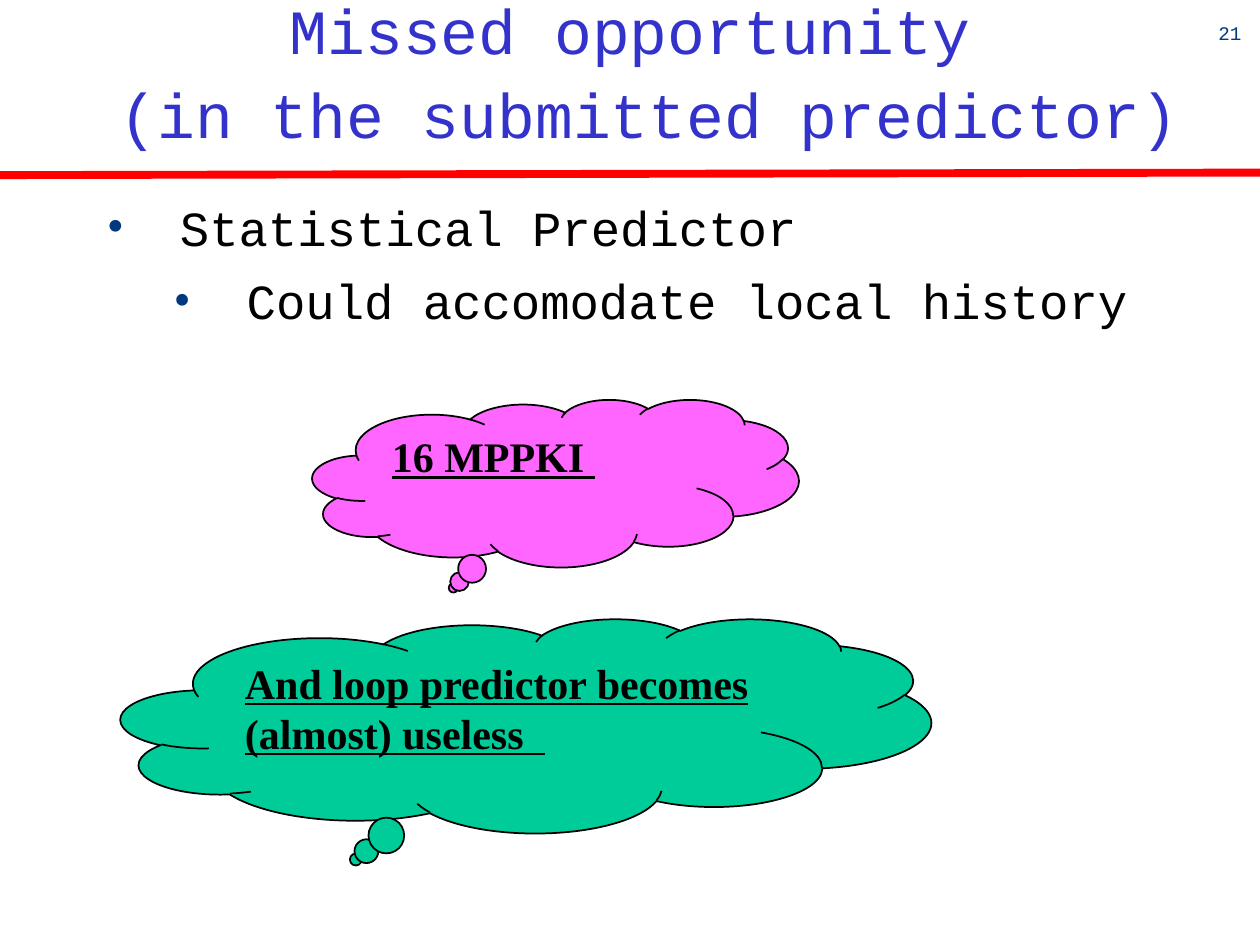
from lxml.etree import SubElement
from pptx import Presentation
from pptx.dml.color import RGBColor
from pptx.enum.shapes import MSO_CONNECTOR, MSO_SHAPE
from pptx.enum.text import MSO_ANCHOR, PP_ALIGN
from pptx.oxml.ns import qn
from pptx.util import Inches, Pt

COLORS = {
    "number": "003980",
    "rule": "FF0000",
    "title": "3333CC",
    "text": "000000",
    "pink": "FF66FF",
    "green": "00CC99",
}


def color(name):
    return RGBColor.from_string(COLORS[name])


def set_font(paragraph, size, color_name, font_name="Courier New"):
    font = paragraph.font
    font.name = font_name
    font.size = Pt(size)
    font.color.rgb = color(color_name)


presentation = Presentation()
presentation.slide_width = Inches(10)
presentation.slide_height = Inches(7.5)
slide = presentation.slides.add_slide(presentation.slide_layouts[6])

# Slide number
number_box = slide.shapes.add_textbox(Inches(9.67), Inches(0.17), Inches(0.2), Inches(0.25))
frame = number_box.text_frame
frame.word_wrap = False
frame.margin_left = frame.margin_right = frame.margin_top = frame.margin_bottom = 0
frame.text = "21"
set_font(frame.paragraphs[0], 11, "number")

# Red rule under the title
rule = slide.shapes.add_connector(
    MSO_CONNECTOR.STRAIGHT, Inches(0), Inches(1.39), Inches(10), Inches(1.37))
rule.line.color.rgb = color("rule")
rule.line.width = Pt(4.5)
SubElement(rule._element.spPr, qn("a:effectLst"))

# Title
title_box = slide.shapes.add_textbox(Inches(0), Inches(0), Inches(10), Inches(1.25))
frame = title_box.text_frame
frame.word_wrap = True
frame.vertical_anchor = MSO_ANCHOR.BOTTOM
paragraph = frame.paragraphs[0]
paragraph.text = "Missed opportunity\v (in the submitted predictor)"
paragraph.alignment = PP_ALIGN.CENTER
paragraph.line_spacing = 1.12
set_font(paragraph, 36, "title")

# Bulleted body: text, level, left margin, space before
bullets = [
    ("Statistical Predictor", 0, 0.58, 0),
    ("Could accomodate local history", 1, 1.11, 4.5),
]
body_box = slide.shapes.add_textbox(Inches(0.75), Inches(1.46), Inches(9.08), Inches(4.94))
frame = body_box.text_frame
frame.word_wrap = True
for index, (text, level, margin, space_before) in enumerate(bullets):
    paragraph = frame.add_paragraph() if index else frame.paragraphs[0]
    paragraph.text = text
    paragraph.level = level
    paragraph.line_spacing = 1.12
    paragraph.space_before = Pt(space_before)
    properties = paragraph._p.get_or_add_pPr()
    properties.set("marL", str(Inches(margin)))
    properties.set("indent", str(Inches(-0.58)))
    bullet_color = SubElement(properties, qn("a:buClr"))
    SubElement(bullet_color, qn("a:srgbClr"), val=COLORS["number"])
    SubElement(properties, qn("a:buFont"), typeface="Times New Roman")
    SubElement(properties, qn("a:buChar"), char="•")
    set_font(paragraph, 28, "text")

# Thought clouds: text, fill, left, top, width, height
clouds = [
    ("16 MPPKI ", "pink", 2.48, 3.17, 3.86, 1.33),
    ("And loop predictor becomes (almost) useless  ", "green", 0.96, 4.91, 6.43, 1.7),
]
for text, fill, *box in clouds:
    cloud = slide.shapes.add_shape(MSO_SHAPE.CLOUD_CALLOUT, *map(Inches, box))
    cloud.shadow.inherit = False
    cloud.adjustments[0] = -0.21
    cloud.adjustments[1] = 0.625
    cloud.fill.solid()
    cloud.fill.fore_color.rgb = color(fill)
    cloud.line.color.rgb = color("text")
    cloud.line.width = Pt(1)
    frame = cloud.text_frame
    frame.word_wrap = True
    frame.vertical_anchor = MSO_ANCHOR.TOP
    paragraph = frame.paragraphs[0]
    paragraph.text = text
    paragraph.alignment = PP_ALIGN.LEFT
    set_font(paragraph, 24, "text", "Times New Roman")
    paragraph.font.bold = True
    paragraph.font.underline = True

presentation.save("out.pptx")
